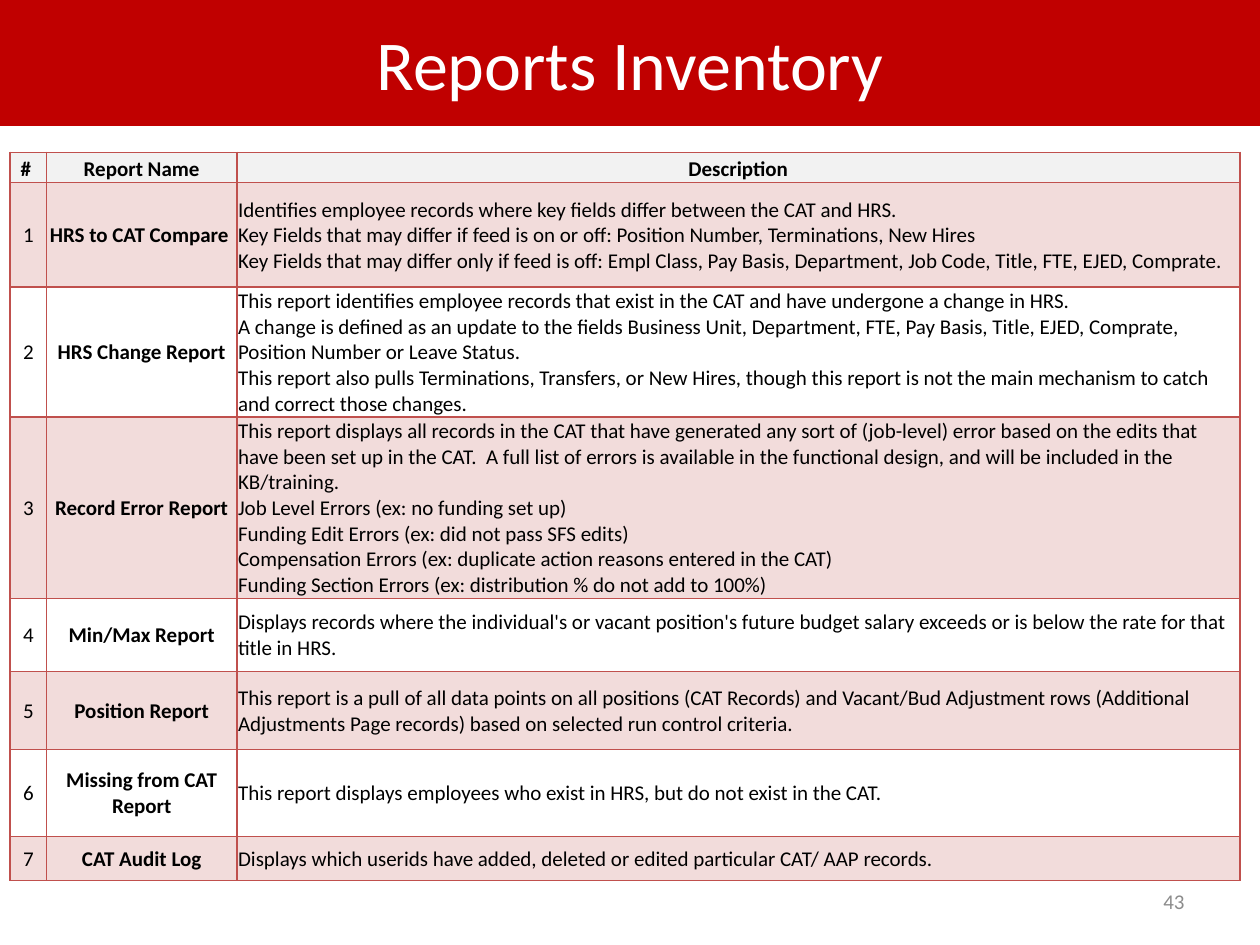
from copy import deepcopy

from lxml import etree
from pptx import Presentation
from pptx.dml.color import RGBColor
from pptx.enum import shapes, text
from pptx.oxml.ns import qn
from pptx.util import Inches, Pt

# Content
TITLE = "Reports Inventory"
PAGE_NUMBER = "43"
HEADER = ("# ", "Report Name", "Description")
REPORTS = [
    ("HRS to CAT Compare ", [
        "Identifies employee records where key fields differ between the CAT and HRS. ",
        "Key Fields that may differ if feed is on or off: Position Number, Terminations, New Hires",
        "Key Fields that may differ only if feed is off: Empl Class, Pay Basis, Department, "
        "Job Code, Title, FTE, EJED, Comprate."]),
    ("HRS Change Report", [
        "This report identifies employee records that exist in the CAT and have undergone "
        "a change in HRS. ",
        "A change is defined as an update to the fields Business Unit, Department, FTE, "
        "Pay Basis, Title, EJED, Comprate, Position Number or Leave Status. ",
        "This report also pulls Terminations, Transfers, or New Hires, though this report is "
        "not the main mechanism to catch and correct those changes."]),
    ("Record Error Report", [
        "This report displays all records in the CAT that have generated any sort of (job-level) "
        "error based on the edits that have been set up in the CAT.  A full list of errors is "
        "available in the functional design, and will be included in the KB/training. ",
        "Job Level Errors (ex: no funding set up)",
        "Funding Edit Errors (ex: did not pass SFS edits)",
        "Compensation Errors (ex: duplicate action reasons entered in the CAT)",
        "Funding Section Errors (ex: distribution % do not add to 100%)"]),
    ("Min/Max Report", [
        "Displays records where the individual's or vacant position's future budget salary "
        "exceeds or is below the rate for that title in HRS."]),
    ("Position Report", [
        "This report is a pull of all data points on all positions (CAT Records) and Vacant/Bud "
        "Adjustment rows (Additional Adjustments Page records) based on selected run control "
        "criteria."]),
    ("Missing from CAT Report", [
        "This report displays employees who exist in HRS, but do not exist in the CAT."]),
    ("CAT Audit Log", [
        "Displays which userids have added, deleted or edited particular CAT/ AAP records."]),
]

# Layout and style
COLUMN_WIDTHS = (0.29, 1.51, 7.96)
ROW_HEIGHTS = (0.24, 0.83, 1.03, 1.44, 0.58, 0.62, 0.69, 0.35)
COLORS = {"banner": "C00000", "white": "FFFFFF", "black": "000000", "gray": "8C8C8C",
          "header": "F2F2F2", "band": "F2DCDB", "border": "C0504D"}
FONT = "Calibri"
LEFT, CENTER, RIGHT = text.PP_ALIGN.LEFT, text.PP_ALIGN.CENTER, text.PP_ALIGN.RIGHT
MIDDLE, BOTTOM = text.MSO_ANCHOR.MIDDLE, text.MSO_ANCHOR.BOTTOM


def rgb(name):
    return RGBColor.from_string(COLORS[name])


def write(frame, content, size=12, color="black", bold=False, align=CENTER):
    """Fill one paragraph; newlines become line breaks of the same size."""
    para = frame.paragraphs[0]
    para.text = content
    para.alignment = align
    for span in para.runs:
        span.font.name, span.font.size, span.font.bold = FONT, Pt(size), bold
        span.font.color.rgb = rgb(color)
    for line_break in para._p.findall(qn("a:br")):
        line_break.append(deepcopy(para.runs[0].font._element))


def add_borders(cell):
    properties = cell._tc.get_or_add_tcPr()
    for side in ("a:lnL", "a:lnR", "a:lnT", "a:lnB"):
        line = etree.SubElement(properties, qn(side), w=str(Pt(1)))
        fill = etree.SubElement(line, qn("a:solidFill"))
        etree.SubElement(fill, qn("a:srgbClr"), val=COLORS["border"])


def format_cell(cell, content, fill=None, anchor=MIDDLE, **style):
    cell.margin_left = cell.margin_right = cell.margin_top = Inches(0.01)
    cell.margin_bottom = 0
    cell.vertical_anchor = anchor
    add_borders(cell)
    if fill:
        cell.fill.solid()
        cell.fill.fore_color.rgb = rgb(fill)
    else:
        cell.fill.background()
    write(cell.text_frame, content, **style)


def main():
    deck = Presentation()
    deck.slide_width, deck.slide_height = Inches(10), Inches(7.5)
    page = deck.slides.add_slide(deck.slide_layouts[6])

    # Page number
    box = page.shapes.add_textbox(Inches(7.17), Inches(6.95), Inches(2.33), Inches(0.4))
    box.text_frame.word_wrap = True
    box.text_frame.vertical_anchor = MIDDLE
    write(box.text_frame, PAGE_NUMBER, color="gray", align=RIGHT)

    # Title banner
    banner = page.shapes.add_shape(shapes.MSO_SHAPE.RECTANGLE, 0, 0, Inches(10), Inches(1))
    banner.shadow.inherit = False
    banner.fill.solid()
    banner.fill.fore_color.rgb = rgb("banner")
    banner.line.fill.background()
    banner.text_frame.vertical_anchor = MIDDLE
    write(banner.text_frame, TITLE, size=40, color="white")

    # Report table
    table = page.shapes.add_table(
        len(ROW_HEIGHTS), len(COLUMN_WIDTHS), Inches(0.08), Inches(1.21),
        Inches(sum(COLUMN_WIDTHS)), Inches(sum(ROW_HEIGHTS))).table
    for column, width in zip(table.columns, COLUMN_WIDTHS):
        column.width = Inches(width)
    for row, height in zip(table.rows, ROW_HEIGHTS):
        row.height = Inches(height)
    for index, label in enumerate(HEADER):
        format_cell(table.cell(0, index), label, fill="header", anchor=BOTTOM, bold=True)
    for number, (name, lines) in enumerate(REPORTS, 1):
        fill = "band" if number % 2 else None
        format_cell(table.cell(number, 0), str(number), fill)
        format_cell(table.cell(number, 1), name, fill, bold=True)
        format_cell(table.cell(number, 2), "\n".join(lines), fill, align=LEFT)

    deck.save("out.pptx")


if __name__ == "__main__":
    main()
